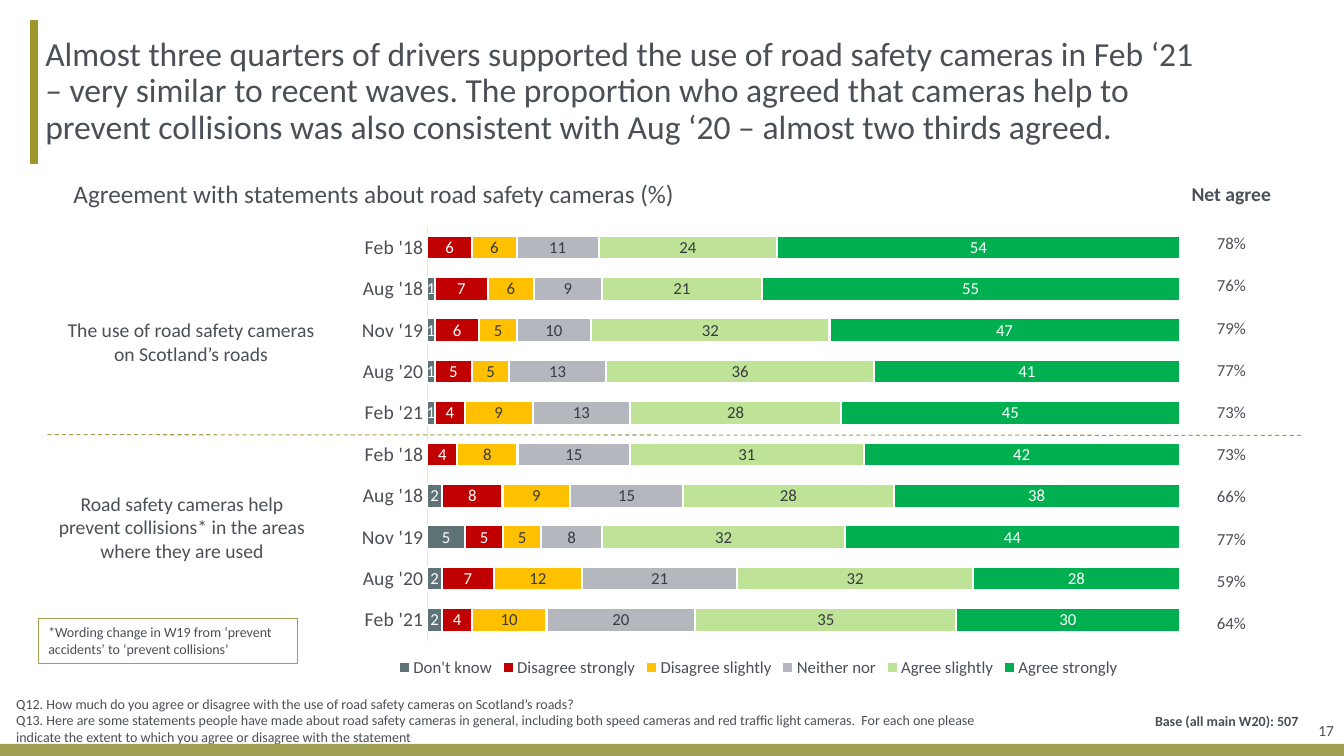
from dataclasses import dataclass

from lxml import etree
from pptx import Presentation
from pptx import util as u
from pptx.chart import data as chart_data
from pptx.dml.color import RGBColor
from pptx.enum import chart as charts, dml, shapes, text
from pptx.oxml.ns import qn

Pt = u.Pt
CENTER, LEFT, RIGHT = text.PP_ALIGN.CENTER, text.PP_ALIGN.LEFT, text.PP_ALIGN.RIGHT
TOP, MIDDLE = text.MSO_ANCHOR.TOP, text.MSO_ANCHOR.MIDDLE


@dataclass(frozen=True)
class Theme:
    """Colours, font and type sizes of the slide."""
    font: str = "Calibri"
    ink: str = "4B4F56"
    dark: str = "383B40"
    white: str = "FFFFFF"
    olive: str = "9FA052"
    accent: str = "9F962B"
    axis: str = "E3E4E7"
    title: float = 24
    heading: float = 18
    label: float = 14
    value: float = 12
    number: float = 11
    note: float = 10


THEME = Theme()
WAVES = ["Feb '18", "Aug '18", "Nov '19", "Aug '20", "Feb '21"]
SERIES = [
    ("Don't know", "5E7376", THEME.white, [None, 1, 1, 1, 1, None, 2, 5, 2, 2]),
    ("Disagree strongly", "C00000", THEME.white, [6, 7, 6, 5, 4, 4, 8, 5, 7, 4]),
    ("Disagree slightly", "FFC000", THEME.dark, [6, 6, 5, 5, 9, 8, 9, 5, 12, 10]),
    ("Neither nor", "B4B8BE", THEME.dark, [11, 9, 10, 13, 13, 15, 15, 8, 21, 20]),
    ("Agree slightly", "BEE396", THEME.dark, [24, 21, 32, 36, 28, 31, 28, 32, 32, 35]),
    ("Agree strongly", "00B050", THEME.white, [54, 55, 47, 41, 45, 42, 38, 44, 28, 30]),
]
NET_AGREE = [78, 76, 79, 77, 73, 73, 66, 77, 59, 64]


def color(value):
    """Turn a hex string into a colour."""
    return RGBColor.from_string(value)


def style(font, size, ink=THEME.ink, bold=False):
    """Format a font."""
    font.name, font.size, font.bold = THEME.font, Pt(size), bold
    font.color.rgb = color(ink)


def write(frame, lines, size, align=LEFT, anchor=TOP, bold=False, spacing=1.0):
    """Fill a text frame with one paragraph per line."""
    frame.word_wrap = True
    frame.auto_size = text.MSO_AUTO_SIZE.NONE
    frame.vertical_anchor = anchor
    for index, line in enumerate(lines):
        paragraph = frame.add_paragraph() if index else frame.paragraphs[0]
        properties = paragraph._p.get_or_add_pPr()
        properties.set("marL", "0")
        properties.set("indent", "0")
        etree.SubElement(properties, qn("a:buNone"))
        paragraph.alignment = align
        paragraph.line_spacing = spacing
        paragraph.space_before = Pt(0)
        run = paragraph.add_run()
        run.text = line
        style(run.font, size, bold=bold)


def place(shape, box):
    """Move a placeholder to a box and tighten its insets."""
    shape.left, shape.top, shape.width, shape.height = map(Pt, box)
    frame = shape.text_frame
    frame.margin_left = Pt(5.76)
    frame.margin_top = frame.margin_right = frame.margin_bottom = 0
    return frame


def add_text(slide, box, line, size, **options):
    """Add a text box with one paragraph."""
    shape = slide.shapes.add_textbox(*map(Pt, box))
    write(shape.text_frame, [line], size, **options)
    return shape


def add_line(slide, start, end, ink, width, dash=None):
    """Add a straight line without shadow."""
    line = slide.shapes.add_connector(
        shapes.MSO_CONNECTOR.STRAIGHT, *map(Pt, start + end))
    line.line.color.rgb = color(ink)
    line.line.width = Pt(width)
    if dash:
        line.line.dash_style = dash
    etree.SubElement(line._element.spPr, qn("a:effectLst"))


def add_rectangle(slide, box):
    """Add a rectangle without fill, line or shadow."""
    shape = slide.shapes.add_shape(shapes.MSO_SHAPE.RECTANGLE, *map(Pt, box))
    shape.shadow.inherit = False
    shape.fill.background()
    shape.line.fill.background()
    return shape


def add_header(slide, box):
    """Add the title with its accent line on the left."""
    left, top, width, height = box
    add_line(slide, (left - 2.2, top), (left - 2.2, top + height), THEME.accent, 6)
    write(place(slide.shapes.title, box), [
        "Almost three quarters of drivers supported the use of road safety cameras "
        "in Feb ‘21 – very similar to recent waves. The proportion who agreed that "
        "cameras help to prevent collisions was also consistent with Aug ‘20 – "
        "almost two thirds agreed."], THEME.title, anchor=MIDDLE, spacing=0.9)


def clear_background(chart):
    """Remove the chart background and border."""
    properties = etree.Element(qn("c:spPr"))
    etree.SubElement(properties, qn("a:noFill"))
    etree.SubElement(etree.SubElement(properties, qn("a:ln")), qn("a:noFill"))
    chart._chartSpace.find(qn("c:chart")).addnext(properties)


def set_plot_layout(chart, fractions):
    """Fix the inner plot area as fractions of the chart."""
    area = chart._chartSpace.find(".//" + qn("c:plotArea"))
    for old in area.findall(qn("c:layout")):
        area.remove(old)
    layout = etree.Element(qn("c:layout"))
    area.insert(0, layout)
    manual = etree.SubElement(layout, qn("c:manualLayout"))
    settings = [("layoutTarget", "inner"), ("xMode", "edge"), ("yMode", "edge")]
    for name, value in settings + list(zip("xywh", fractions)):
        etree.SubElement(manual, qn(f"c:{name}")).set("val", str(value))


def add_agreement_chart(slide, box):
    """Add the stacked bars of agreement per wave."""
    data = chart_data.CategoryChartData(number_format="0")
    data.categories = WAVES * 2
    for name, _, _, values in SERIES:
        data.add_series(name, values)
    chart = slide.shapes.add_chart(
        charts.XL_CHART_TYPE.BAR_STACKED_100, *map(Pt, box), data).chart
    style(chart.font, THEME.note)
    clear_background(chart)
    set_plot_layout(chart, (0.15, 0.126, 0.795, 0.796))
    chart.has_title = False
    chart.has_legend = True
    chart.legend.position = charts.XL_LEGEND_POSITION.BOTTOM
    chart.legend.include_in_layout = False
    style(chart.legend.font, THEME.value)
    waves, scale = chart.category_axis, chart.value_axis
    waves.reverse_order = True
    waves.major_tick_mark = charts.XL_TICK_MARK.NONE
    waves.format.line.color.rgb = color(THEME.axis)
    waves.format.line.width = Pt(0.75)
    style(waves.tick_labels.font, THEME.label)
    scale.maximum_scale = 1
    scale.has_major_gridlines = False
    scale.visible = False
    plot = chart.plots[0]
    plot.gap_width, plot.overlap, plot.vary_by_categories = 75, 100, False
    for series, (_, fill, ink, _) in zip(plot.series, SERIES):
        series.format.fill.solid()
        series.format.fill.fore_color.rgb = color(fill)
        series.format.line.color.rgb = color(THEME.white)
        series.format.line.width = Pt(1.5)
        labels = series.data_labels
        labels.show_value = True
        labels.position = charts.XL_LABEL_POSITION.CENTER
        style(labels.font, THEME.value, ink)


def add_net_table(slide, box):
    """Add the column of net agreement beside the bars."""
    rows = ["Net agree"] + [f"{value}%" for value in NET_AGREE]
    table = slide.shapes.add_table(len(rows), 1, *map(Pt, box)).table
    table.first_row = table.horz_banding = False
    head = 39.6
    for index, line in enumerate(rows):
        table.rows[index].height = Pt(head if index == 0 else (box[3] - head) / len(NET_AGREE))
        cell = table.cell(index, 0)
        cell.fill.background()
        cell.vertical_anchor = MIDDLE
        size = THEME.value if index else THEME.label
        write(cell.text_frame, [line], size, CENTER, MIDDLE, bold=index == 0)


def add_statements(slide, box):
    """Add the statement labels, their divider and the wording note."""
    left, top, width, height = box
    add_text(slide, (left + 6.5, top, width, 41),
             "The use of road safety cameras on Scotland’s roads", THEME.label, align=CENTER)
    add_text(slide, (left, top + 123.8, width, 58),
             "Road safety cameras help prevent collisions* in the areas where they are used",
             THEME.label, align=CENTER)
    add_line(slide, (left + 6.5, top + 86.6), (left + 903.6, top + 87.1),
             THEME.olive, 0.75, dml.MSO_LINE.DASH)
    note = add_rectangle(slide, (left, top + height - 31.7, 185, 31.7))
    note.line.color.rgb = color(THEME.olive)
    note.line.width = Pt(0.75)
    write(note.text_frame, ["*Wording change in W19 from ‘prevent accidents’ to "
                            "‘prevent collisions’"], THEME.note)


def add_footer(slide, box):
    """Add the questions, the base, the slide number and the bottom bar."""
    left, top, width, height = box
    bar = add_rectangle(slide, (left, top + height - 8.6, width, 8.6))
    bar.fill.solid()
    bar.fill.fore_color.rgb = color(THEME.olive)
    write(place(slide.placeholders[1], (left + 5.8, top, 717, 44)), [
        "Q12. How much do you agree or disagree with the use of road safety cameras "
        "on Scotland’s roads?",
        "Q13. Here are some statements people have made about road safety cameras in "
        "general, including both speed cameras and red traffic light cameras.  For each "
        "one please indicate the extent to which you agree or disagree with the statement",
    ], THEME.note, anchor=MIDDLE)
    base = add_text(slide, (left + 643.7, top + 15, 283.7, 15), "Base (all main W20): 507",
                    THEME.note, align=RIGHT, anchor=MIDDLE, bold=True)
    place(base, (left + 643.7, top + 15, 283.7, 15))
    add_text(slide, (left + 894, top + 8, 66, 42), "17", THEME.number,
             align=RIGHT, anchor=MIDDLE)


def main():
    """Build and save the slide."""
    presentation = Presentation()
    presentation.slide_width, presentation.slide_height = Pt(960), Pt(540)
    slide = presentation.slides.add_slide(presentation.slide_layouts[1])
    add_header(slide, (26.6, 14.4, 838.8, 102.6))
    add_text(slide, (45.4, 123.8, 681.8, 29), "Agreement with statements about road "
             "safety cameras (%)", THEME.heading)
    add_agreement_chart(slide, (203.8, 115.2, 676, 371.5))
    add_net_table(slide, (842.4, 119.5, 74.2, 341.3))
    add_statements(slide, (27.4, 223.9, 205.2, 249.9))
    add_footer(slide, (0, 492.5, 960, 47.5))
    presentation.save("out.pptx")


if __name__ == "__main__":
    main()
